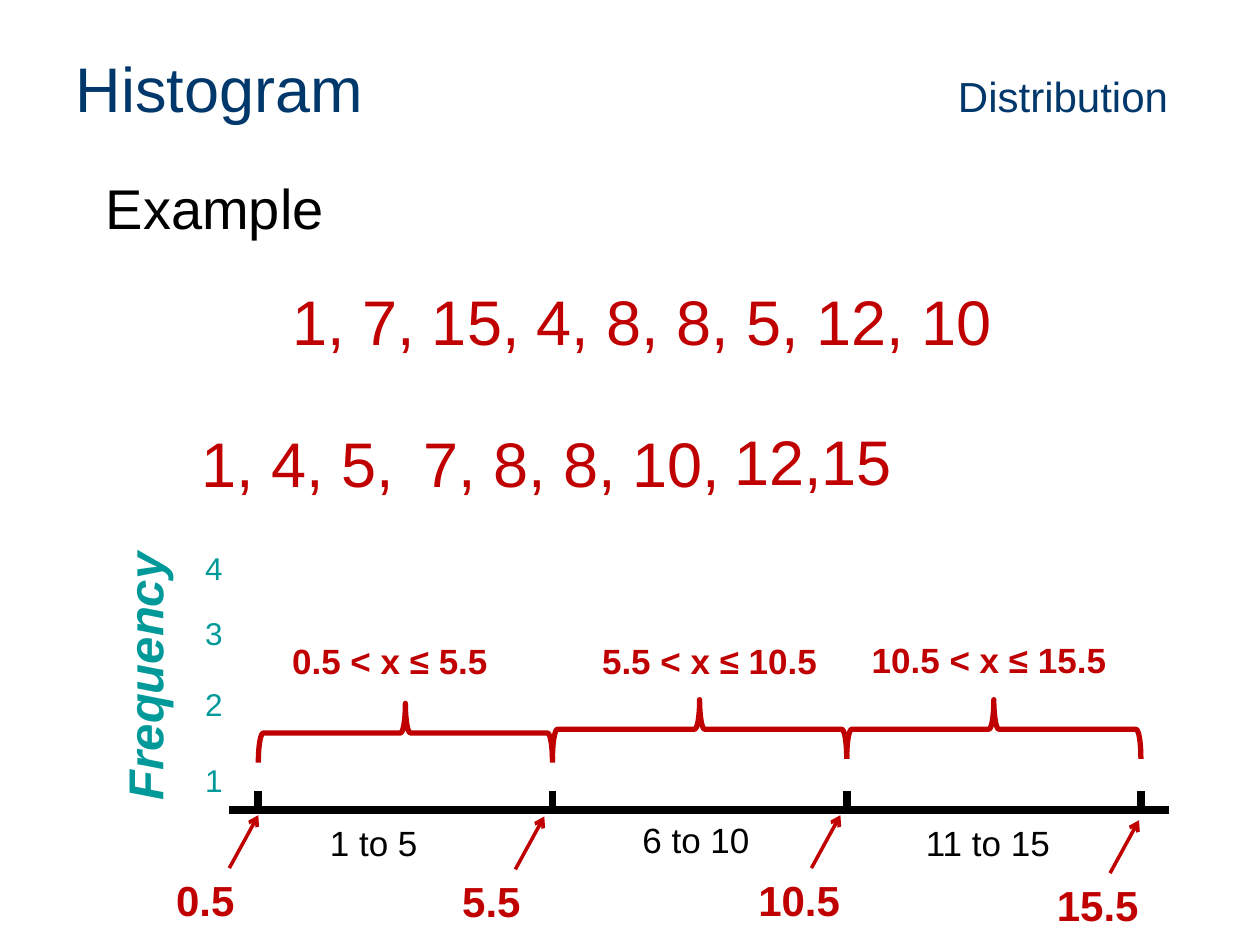
import pptx
import pptx.util
import pptx.dml.color
import pptx.enum.shapes
import pptx.enum.text
import pptx.oxml
import pptx.oxml.ns
import lxml.etree

colours = {"navy": "00386B", "red": "C00000", "teal": "009999", "black": "000000"}

deck = pptx.Presentation()
deck.slide_width = pptx.util.Inches(10)
deck.slide_height = pptx.util.Inches(7.5)
column = deck.slide_width / 10
row = deck.slide_height / 7.5
page = deck.slides.add_slide(deck.slide_layouts[1])


def write(box, place, text, size, colour, **formats):
    left, top, width = place
    height = size * 1.22 / 72 + 0.1
    box.left, box.top = int(left * column), int(top * row)
    box.width, box.height = int(width * column), int(height * row)
    frame = box.text_frame
    frame.word_wrap = True
    frame.auto_size = pptx.enum.text.MSO_AUTO_SIZE.SHAPE_TO_FIT_TEXT
    para = frame.paragraphs[0]
    span = para.add_run()
    span.text = text
    values = {"name": "Arial", "size": pptx.util.Pt(size), **formats}
    for name, value in values.items():
        setattr(span.font, name, value)
    span.font.color.rgb = pptx.dml.color.RGBColor.from_string(colours[colour])
    return box


def draw_line(start, end, colour, weight):
    line = page.shapes.add_connector(
        pptx.enum.shapes.MSO_CONNECTOR.STRAIGHT,
        int(start[0] * column), int(start[1] * row),
        int(end[0] * column), int(end[1] * row))
    line.line.color.rgb = pptx.dml.color.RGBColor.from_string(colours[colour])
    line.line.width = pptx.util.Pt(weight)
    lxml.etree.SubElement(line._element.spPr, pptx.oxml.ns.qn("a:effectLst"))
    return line


title = page.shapes.title
write(title, (0.5, 0.3, 9), "Histogram\t", 36, "navy")
title.text_frame.auto_size = pptx.enum.text.MSO_AUTO_SIZE.NONE
title.text_frame.vertical_anchor = pptx.enum.text.MSO_ANCHOR.MIDDLE
title.height = int(0.78 * row)
heading = title.text_frame.paragraphs[0]
heading.alignment = pptx.enum.text.PP_ALIGN.LEFT
topic = heading.add_run()
topic.text = "Distribution"
for name, value in {"name": "Arial", "size": pptx.util.Pt(24)}.items():
    setattr(topic.font, name, value)
topic.font.color.rgb = pptx.dml.color.RGBColor.from_string(colours["navy"])
tabs = lxml.etree.SubElement(heading._p.get_or_add_pPr(), pptx.oxml.ns.qn("a:tabLst"))
lxml.etree.SubElement(tabs, pptx.oxml.ns.qn("a:tab"), pos=str(int(8.67 * column)), algn="r")

body = write(page.placeholders[1], (0.74, 1.33, 8.6), "Example", 32, "black")
body_format = body.text_frame.paragraphs[0]._p.get_or_add_pPr()
for name in ("marL", "indent"):
    body_format.set(name, "0")
body.text_frame.paragraphs[0].space_before = pptx.util.Pt(0)
lxml.etree.SubElement(body_format, pptx.oxml.ns.qn("a:buNone"))

series = [
    ("1, 7, 15, 4, 8, 8, 5, 12, 10", 2.22, 2.19, 5.88),
    ("1, 4, 5,", 1.5, 3.32, 1.86),
    ("7, 8, 8, 10,", 3.26, 3.32, 2.82),
    ("12,15", 5.73, 3.3, 1.75),
]
for text, left, top, width in series:
    write(page.shapes.add_textbox(0, 0, 0, 0), (left, top, width), text, 36, "red")

for count, top in ((4, 4.31), (3, 4.82), (2, 5.39), (1, 5.99)):
    write(page.shapes.add_textbox(0, 0, 0, 0), (1.53, top, 0.35), str(count), 18, "teal")

axis_name = write(page.shapes.add_textbox(0, 0, 0, 0), (-0.12, 5.08, 2.53),
                  "Frequency", 28, "teal", bold=True, italic=True)
axis_name.text_frame.paragraphs[0].alignment = pptx.enum.text.PP_ALIGN.CENTER
axis_name.rotation = 270

first_tick, bin_width, axis_top = 2.05, 2.335, 6.43
draw_line((1.82, axis_top), (9.28, axis_top), "black", 4.5)

boundaries = [("0.5", 1.82, 6.89), ("5.5", 4.09, 6.9), ("10.5", 6.44, 6.89), ("15.5", 8.81, 6.93)]
for index, (text, middle, top) in enumerate(boundaries):
    tick = first_tick + index * bin_width
    draw_line((tick, axis_top - 0.15), (tick, axis_top), "black", 4.5)
    label = write(page.shapes.add_textbox(0, 0, 0, 0), (middle - 0.52, top, 1.04),
                  text, 24, "red", bold=True)
    arrow = draw_line((middle, top), (middle + 0.23, top - 0.42), "red", 2)
    arrow.begin_connect(label, 0)
    lxml.etree.SubElement(arrow.line._get_or_add_ln(), pptx.oxml.ns.qn("a:tailEnd"), type="arrow")

bins = [
    ("1 to 5", (2.52, 6.47, 1.26), "0.5 < x ≤ 5.5", (2.22, 5.03, 1.87), 4.65),
    ("6 to 10", (5, 6.45, 1.08), "5.5 < x ≤ 10.5", (4.68, 5.03, 1.99), 4.62),
    ("11 to 15", (7.25, 6.47, 1.44), "10.5 < x ≤ 15.5", (6.82, 5.02, 2.24), 4.62),
]
brace_depth = 0.47
for index, (name, name_place, limits, limits_place, brace_top) in enumerate(bins):
    write(page.shapes.add_textbox(0, 0, 0, 0), name_place, name, 20, "black")
    write(page.shapes.add_textbox(0, 0, 0, 0), limits_place, limits, 20, "red", bold=True)
    middle = first_tick + (index + 0.5) * bin_width
    brace = page.shapes.add_shape(
        pptx.enum.shapes.MSO_SHAPE.RIGHT_BRACE,
        int((middle - brace_depth / 2) * column), int(brace_top * row),
        int(brace_depth * column), int(bin_width * row))
    brace.rotation = 270
    brace.shadow.inherit = False
    brace.fill.background()
    brace.line.color.rgb = pptx.dml.color.RGBColor.from_string(colours["red"])
    brace.line.width = pptx.util.Pt(3)

deck.save("out.pptx")
